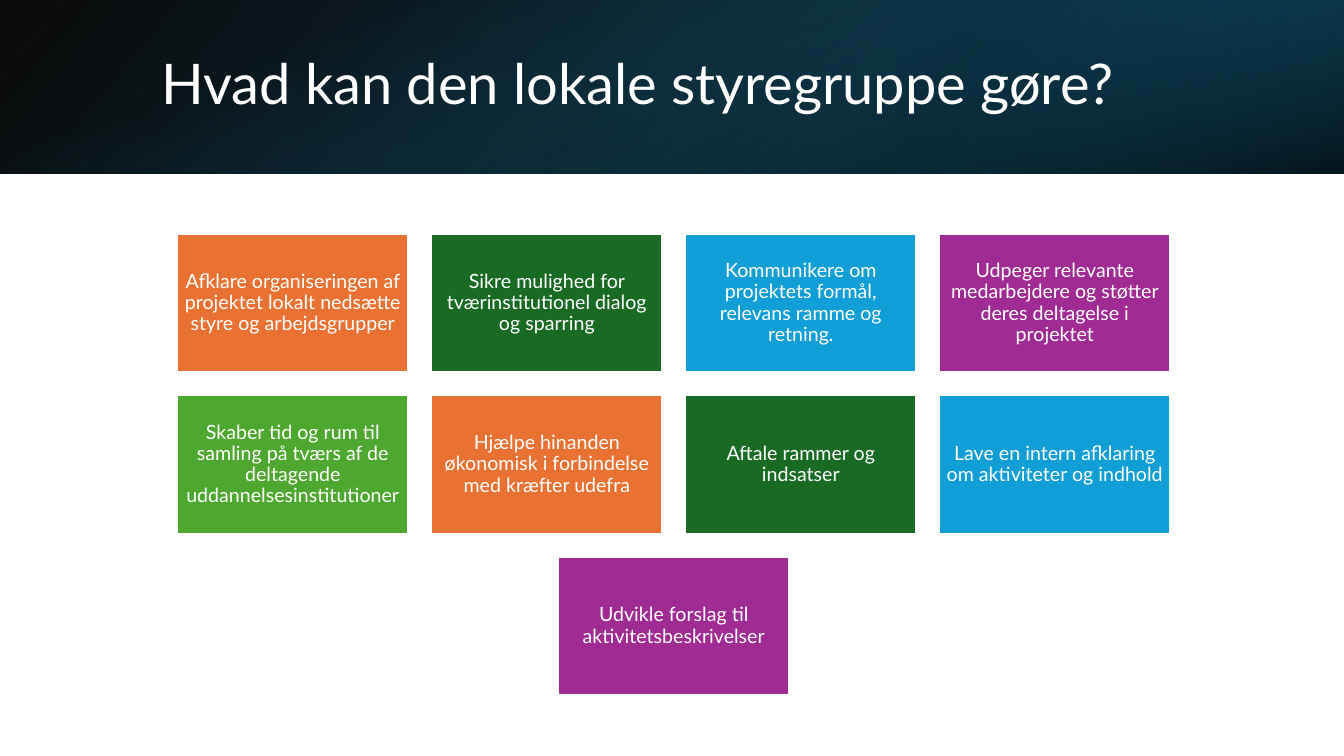
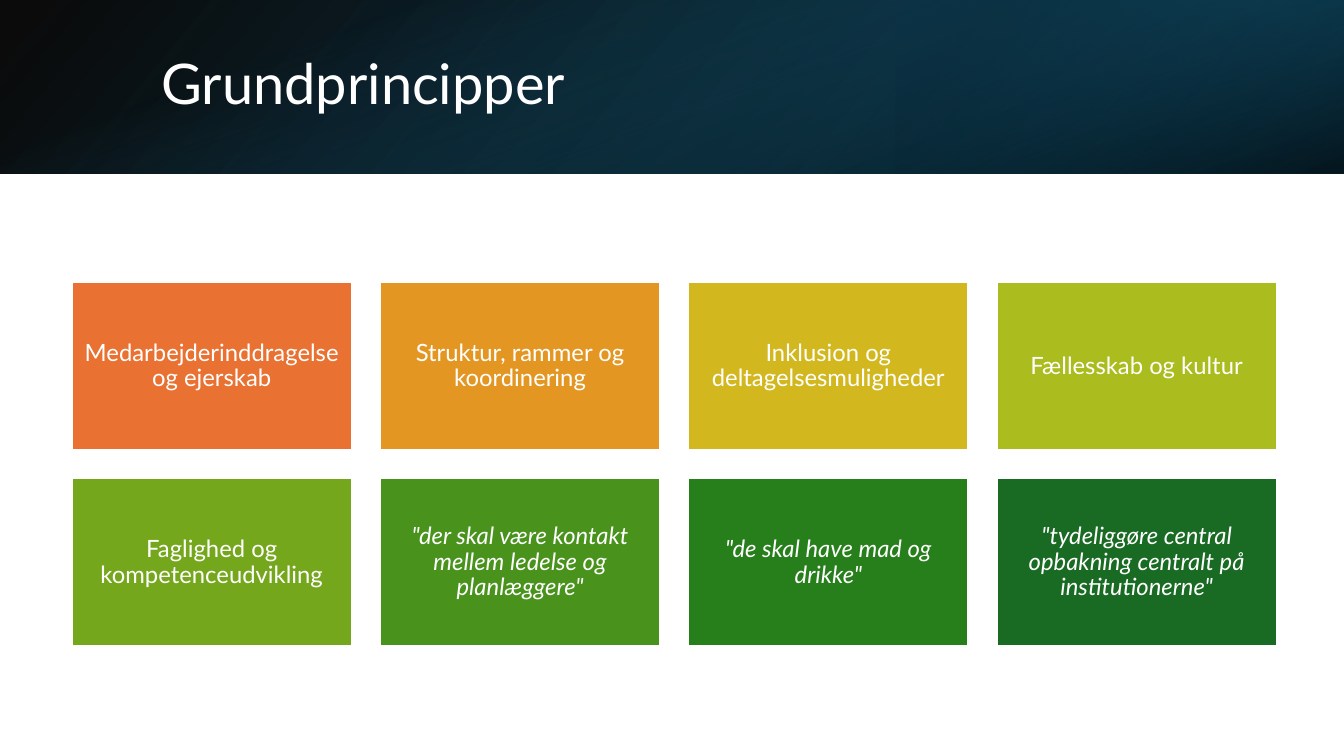
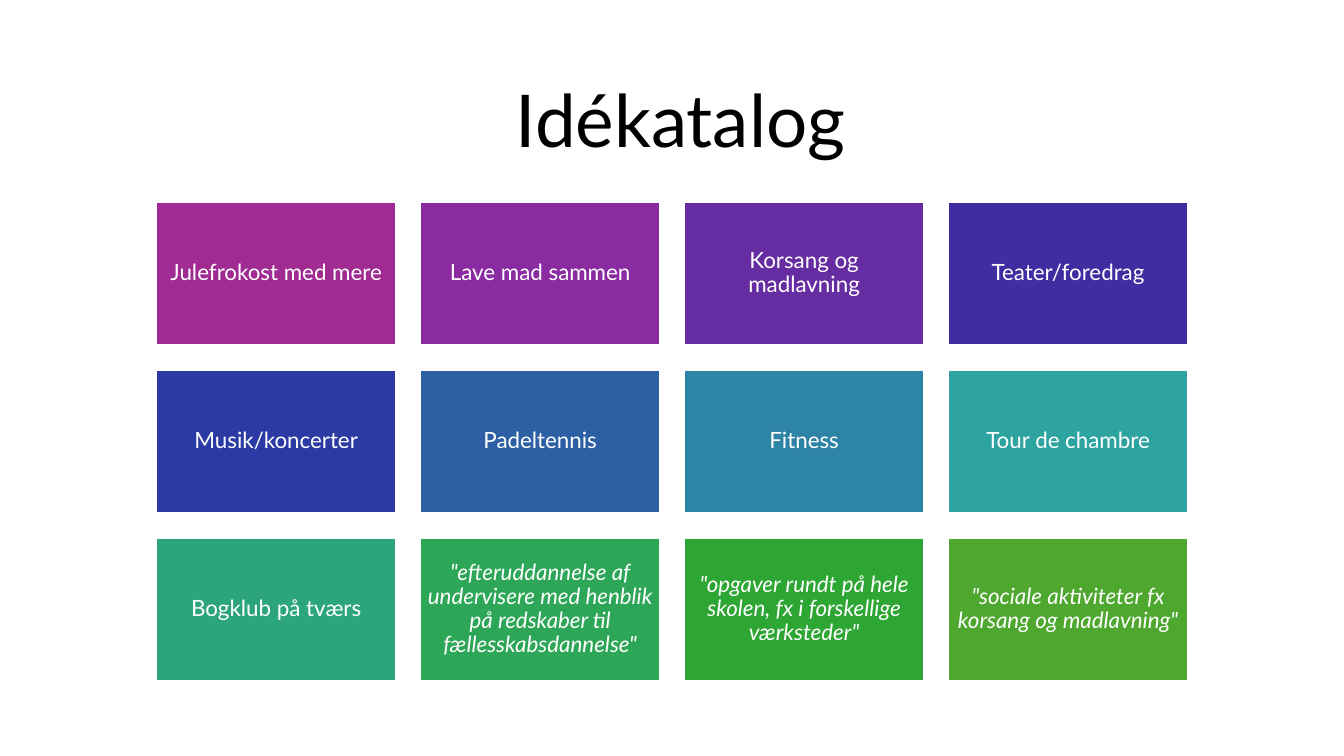
"""Build three slides of coloured tile grids about local steering groups."""
from dataclasses import dataclass
from itertools import cycle

from pptx import Presentation
from pptx.dml.color import RGBColor
from pptx.enum.shapes import MSO_SHAPE as Shape
from pptx.enum.text import MSO_ANCHOR as Anchor, MSO_AUTO_SIZE as AutoSize, PP_ALIGN as Align
from pptx.oxml import parse_xml
from pptx.oxml.ns import nsdecls, qn
from pptx.util import Inches, Pt


@dataclass(frozen=True)
class Theme:
    font: str = "Lato"
    white: str = "FFFFFF"
    black: str = "000000"
    deep: str = "104862"
    night: str = "0B3041"
    teal: str = "156082"
    accents: tuple = ("E97132", "196B24", "0F9ED5", "A02B93", "4EA72E")
    warm_to_green: tuple = ("E97132", "E49622", "D2B81E", "ABBC1E",
                            "75A71D", "49931D", "277F1B", "196B24")
    purple_to_green: tuple = ("A02B93", "8A2BA1", "662CA1", "422CA2",
                              "2C3AA3", "2C5FA3", "2D84A4", "2DA4A0",
                              "2DA57C", "2DA657", "2EA633", "4EA72E")
    band_title: int = 40
    plain_title: int = 52
    line: float = 1.5
    spacing: float = 0.9


THEME = Theme()
WIDTH, HEIGHT, BAND = 13.33, 7.5, 1.72
COLUMNS, GAP_RATIO, HEIGHT_RATIO = 4, 0.1, 0.6

BAND_LAYERS = [
    dict(box=(0, 0, WIDTH, BAND), turn=0, flip=True, angle=140,
         stops=[(0, THEME.black, 96), (100, THEME.deep, 100)]),
    dict(box=(WIDTH * 2 / 3, 0, WIDTH / 3, BAND), turn=180, flip=True, angle=320,
         stops=[(19, THEME.night, 68), (100, THEME.teal, 79)]),
    dict(box=((WIDTH - BAND) / 2, (BAND - WIDTH) / 2, BAND, WIDTH), turn=90, flip=False,
         angle=340, stops=[(23, THEME.teal, 0), (99, THEME.black, 74)]),
]

SLIDES = [
    dict(title="Hvad kan den lokale styregruppe gøre?", band=True,
         left=1.76, top=2.32, width=2.29, size=14, inset=0.06, colours=THEME.accents,
         tiles=["Afklare organiseringen af projektet lokalt nedsætte styre og arbejdsgrupper",
                "Sikre mulighed for tværinstitutionel dialog og sparring",
                "Kommunikere om projektets formål, relevans ramme og retning.",
                "Udpeger relevante medarbejdere og støtter deres deltagelse i projektet",
                "Skaber tid og rum til samling på tværs af de deltagende "
                "uddannelsesinstitutioner",
                "Hjælpe hinanden økonomisk i forbindelse med kræfter udefra",
                "Aftale rammer og indsatser",
                "Lave en intern afklaring om aktiviteter og indhold",
                "Udvikle forslag til aktivitetsbeskrivelser"]),
    dict(title="Grundprincipper", band=True,
         left=0.71, top=2.8, width=2.78, size=17, inset=0.07, colours=THEME.warm_to_green,
         tiles=["Medarbejderinddragelse og ejerskab",
                "Struktur, rammer og koordinering",
                "Inklusion og deltagelsesmuligheder",
                "Fællesskab og kultur",
                "Faglighed og kompetenceudvikling",
                '"der skal være kontakt mellem ledelse og planlæggere"',
                '"de skal have mad og drikke"',
                '"tydeliggøre central opbakning centralt på institutionerne"']),
    dict(title="Idékatalog", band=False,
         left=1.55, top=2, width=2.38, size=16, inset=0.07, colours=THEME.purple_to_green,
         tiles=["Julefrokost med mere", "Lave mad sammen", "Korsang og madlavning",
                "Teater/foredrag", "Musik/koncerter", "Padeltennis", "Fitness",
                "Tour de chambre", "Bogklub på tværs",
                '"efteruddannelse af undervisere med henblik på redskaber til '
                'fællesskabsdannelse"',
                '"opgaver rundt på hele skolen, fx i forskellige værksteder"',
                '"sociale aktiviteter fx korsang og madlavning"']),
]


def write(shape, text, size, colour, align, italic=None):
    frame = shape.text_frame
    frame.word_wrap = True
    frame.auto_size = AutoSize.NONE
    frame.vertical_anchor = Anchor.MIDDLE
    para = frame.paragraphs[0]
    para.text = text
    para.alignment = align
    para.line_spacing = THEME.spacing
    para.font.name = THEME.font
    para.font.size = Pt(size)
    para.font.color.rgb = RGBColor.from_string(colour)
    para.font.italic = italic


def add_rectangle(page, box):
    shape = page.shapes.add_shape(Shape.RECTANGLE, *map(Inches, box))
    shape.shadow.inherit = False
    return shape


def add_band_layer(page, box, turn, flip, angle, stops):
    layer = add_rectangle(page, box)
    layer.rotation = turn
    layer.line.fill.background()
    layer.fill.background()
    properties = layer._element.spPr
    if flip:
        properties.find(qn("a:xfrm")).set("flipH", "1")
    marks = "".join(
        f'<a:gs pos="{place * 1000}"><a:srgbClr val="{colour}">'
        f'<a:alpha val="{alpha * 1000}"/></a:srgbClr></a:gs>'
        for place, colour, alpha in stops)
    gradient = parse_xml(f'<a:gradFill {nsdecls("a")}><a:gsLst>{marks}</a:gsLst>'
                         f'<a:lin ang="{angle * 60000}" scaled="0"/></a:gradFill>')
    properties.replace(properties.find(qn("a:noFill")), gradient)


def add_title(page, text, band):
    title = page.shapes.title
    if band:
        for layer in BAND_LAYERS:
            add_band_layer(page, **layer)
        page.shapes._spTree.append(title._element)
        box, size, colour, align = (1.5, 0.38, 10.98, 0.96), THEME.band_title, THEME.white, Align.LEFT
    else:
        box, size, colour, align = (1, 0.61, 11.5, 1.24), THEME.plain_title, THEME.black, Align.CENTER
    title.left, title.top, title.width, title.height = map(Inches, box)
    write(title, text, size, colour, align)


def add_tiles(page, tiles, colours, left, top, width, size, inset):
    height, gap = width * HEIGHT_RATIO, width * GAP_RATIO
    for index, (text, colour) in enumerate(zip(tiles, cycle(colours))):
        row, column = divmod(index, COLUMNS)
        in_row = min(COLUMNS, len(tiles) - row * COLUMNS)
        column += (COLUMNS - in_row) / 2
        tile = add_rectangle(page, (left + column * (width + gap),
                                    top + row * (height + gap), width, height))
        tile.fill.solid()
        tile.fill.fore_color.rgb = RGBColor.from_string(colour)
        tile.line.color.rgb = RGBColor.from_string(THEME.white)
        tile.line.width = Pt(THEME.line)
        frame = tile.text_frame
        frame.margin_left = frame.margin_right = Inches(inset)
        frame.margin_top = frame.margin_bottom = Inches(inset)
        write(tile, text, size, THEME.white, Align.CENTER, text.startswith('"'))


def main():
    deck = Presentation()
    deck.slide_width, deck.slide_height = Inches(WIDTH), Inches(HEIGHT)
    title_only = deck.slide_layouts[5]
    for content in SLIDES:
        page = deck.slides.add_slide(title_only)
        grid = dict(content)
        add_title(page, grid.pop("title"), grid.pop("band"))
        add_tiles(page, **grid)
    deck.save("out.pptx")


if __name__ == "__main__":
    main()
